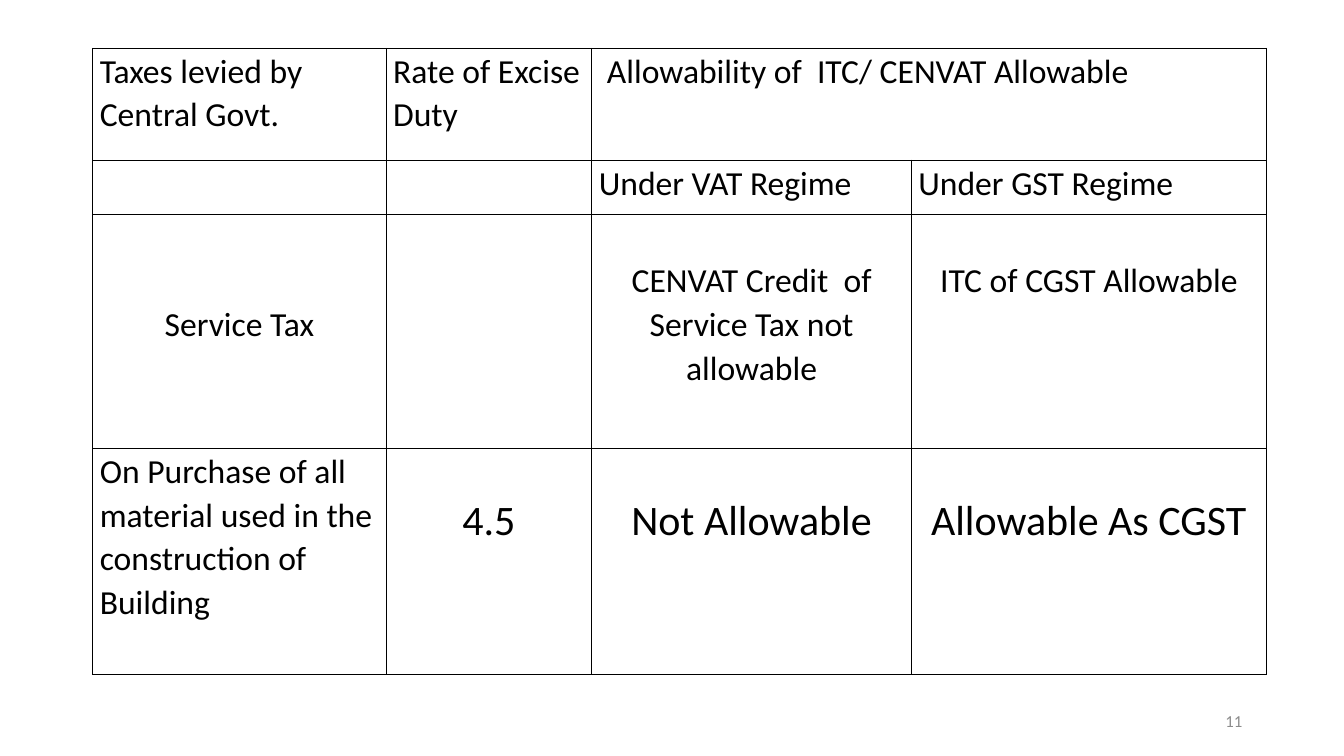
from lxml.etree import SubElement
from pptx import Presentation
from pptx.dml.color import RGBColor
from pptx.enum.text import MSO_ANCHOR, PP_ALIGN
from pptx.oxml.ns import qn
from pptx.util import Inches, Pt

# Content: (text, alignment, size, lines skipped above)
LEFT, MID = PP_ALIGN.LEFT, PP_ALIGN.CENTER
ROWS = [
    [("Taxes levied by Central Govt.", LEFT, 24, 0),
     ("Rate of Excise Duty", LEFT, 24, 0),
     ("Allowability of  ITC/ CENVAT Allowable", LEFT, 24, 0), None],
    [None, None,
     ("Under VAT Regime", LEFT, 24, 0),
     ("Under GST Regime", LEFT, 24, 0)],
    [("Service Tax", MID, 24, 2), None,
     ("CENVAT Credit  of Service Tax not allowable", MID, 24, 1),
     ("ITC of CGST Allowable", MID, 24, 1)],
    [("On Purchase of all material used in the construction of Building",
      LEFT, 24, 0),
     ("4.5", MID, 30, 1),
     ("Not Allowable", MID, 30, 1),
     ("Allowable As CGST", MID, 30, 1)],
]
NUMBER = "11"

# Grid, in inches
WIDTHS = [2.91, 2.04, 3.17, 3.52]
HEIGHTS = [1.11, 0.54, 2.32, 2.24]
PAD, INDENT, LINE = 0.07, 0.15, 0.43
INK, GREY = "000000", "8C8C8C"


def color(code):
    return RGBColor.from_string(code)


def style(par, size, code, align):
    par.alignment = align
    par.font.name = "Calibri"
    par.font.size = Pt(size)
    par.font.color.rgb = color(code)


def border(cell):
    props = cell._tc.get_or_add_tcPr()
    for spot, side in enumerate(("lnL", "lnR", "lnT", "lnB")):
        line = props.makeelement(qn(f"a:{side}"), {"w": str(Pt(1))})
        fill = SubElement(line, qn("a:solidFill"))
        SubElement(fill, qn("a:srgbClr"), val=INK)
        props.insert(spot, line)


def write(cell, item):
    text, align, size, skip = item
    cell.margin_top = Inches(skip * LINE)
    par = cell.text_frame.paragraphs[0]
    par.text = text
    par.line_spacing = 1.07
    style(par, size, INK, align)


deck = Presentation()
deck.slide_width, deck.slide_height = Inches(13.33), Inches(7.5)
slide = deck.slides.add_slide(deck.slide_layouts[6])

# Tax table
frame = slide.shapes.add_table(
    len(HEIGHTS), len(WIDTHS), Inches(0.92), Inches(0.48),
    Inches(sum(WIDTHS)), Inches(sum(HEIGHTS)))
table = frame.table
table.first_row = table.horz_banding = False
for col, width in zip(table.columns, WIDTHS):
    col.width = Inches(width)
for row, height, items in zip(table.rows, HEIGHTS, ROWS):
    row.height = Inches(height)
    for cell, item in zip(row.cells, items):
        cell.margin_left = cell.margin_right = Inches(PAD)
        cell.margin_top = cell.margin_bottom = 0
        cell.fill.background()
        border(cell)
        if item:
            write(cell, item)

# Heading across the two regimes
head = table.cell(0, 2)
head.merge(table.cell(0, 3))
head.margin_left = Inches(INDENT)

# Slide number
box = slide.shapes.add_textbox(Inches(9.42), Inches(6.95), Inches(3), Inches(0.4))
note = box.text_frame
note.word_wrap = True
note.vertical_anchor = MSO_ANCHOR.MIDDLE
note.text = NUMBER
style(note.paragraphs[0], 12, GREY, PP_ALIGN.RIGHT)

deck.save("out.pptx")
